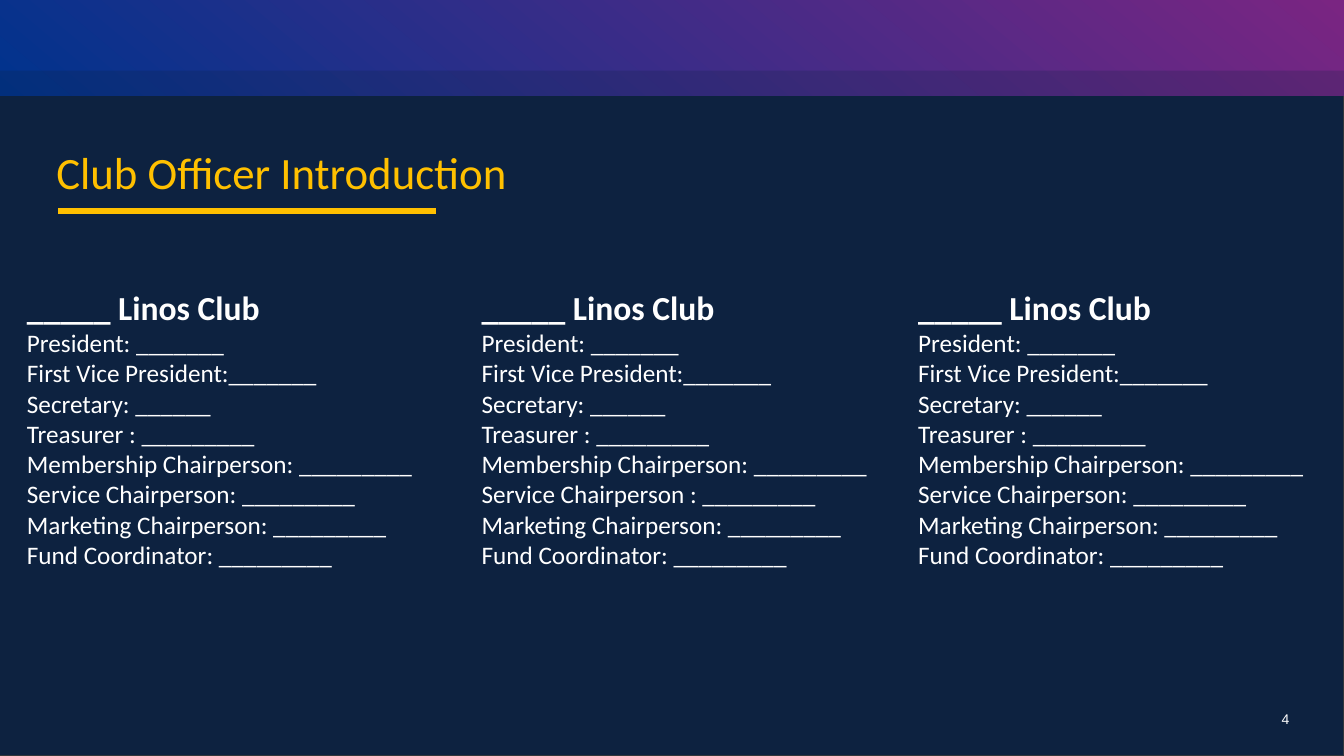
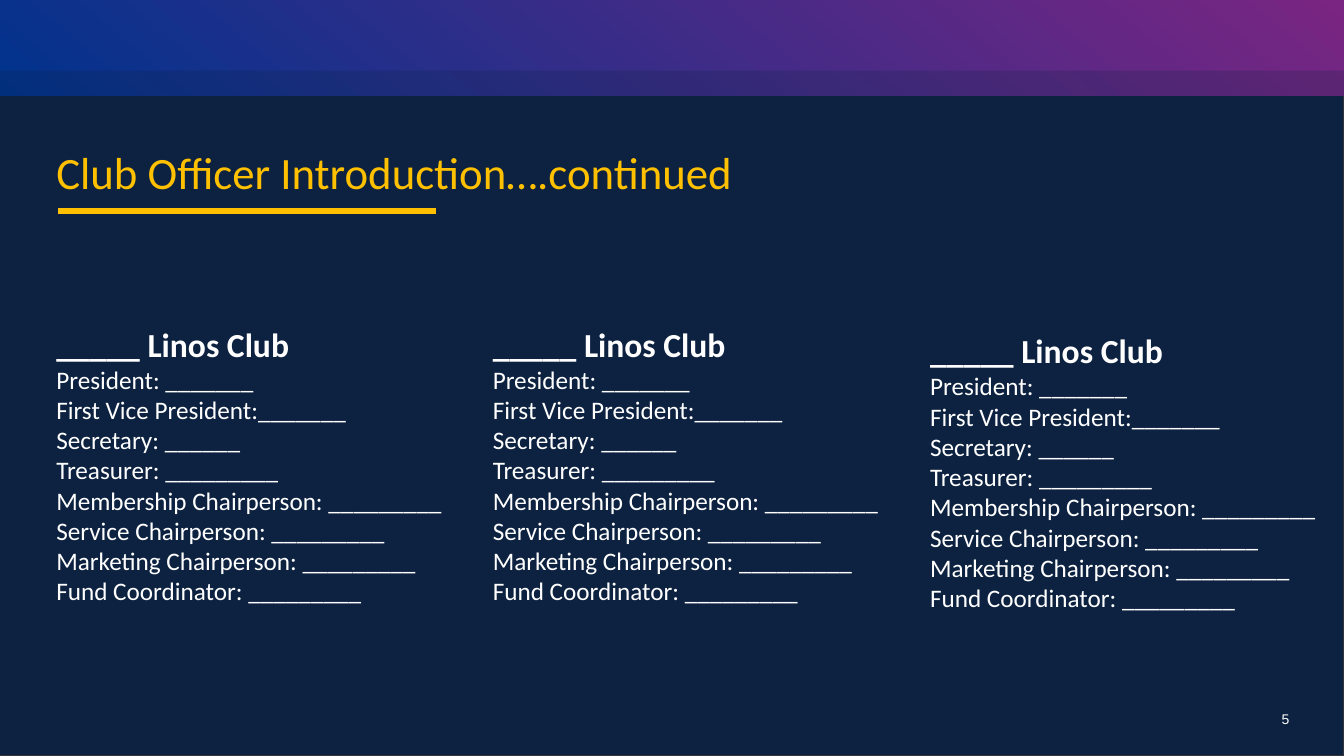
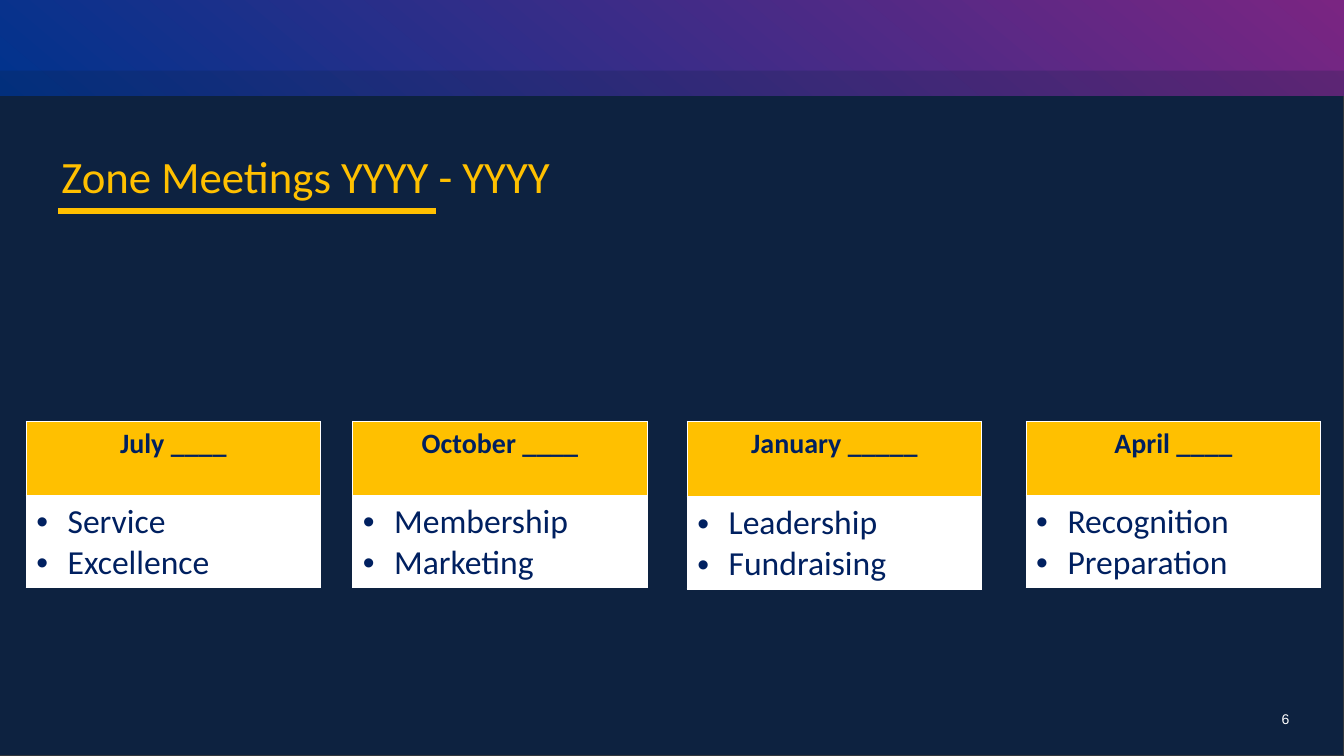
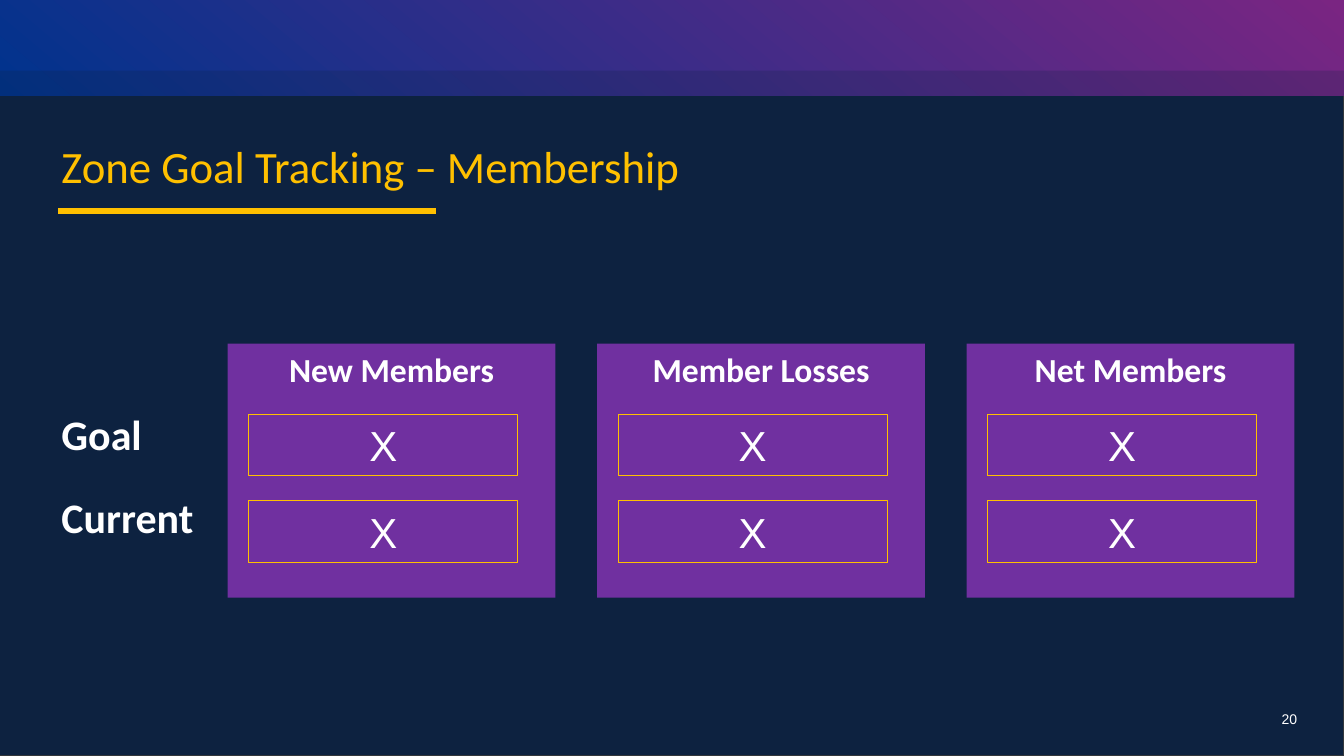
from dataclasses import dataclass

from pptx import Presentation
from pptx.dml.color import RGBColor
from pptx.enum.shapes import MSO_CONNECTOR, MSO_SHAPE
from pptx.enum.text import MSO_ANCHOR, PP_ALIGN
from pptx.oxml.ns import qn
from pptx.oxml.xmlchemy import OxmlElement
from pptx.util import Cm, Pt

RECTANGLE = MSO_SHAPE.RECTANGLE
STRAIGHT = MSO_CONNECTOR.STRAIGHT
TOP, MIDDLE = MSO_ANCHOR.TOP, MSO_ANCHOR.MIDDLE
LEFT, CENTER = PP_ALIGN.LEFT, PP_ALIGN.CENTER

SLIDE_WIDTH, SLIDE_HEIGHT = 33.87, 19.05
NAVY, EDGE, BLUE, MAGENTA = "0D2240", "33373B", "00338D", "7A2582"
GOLD, WHITE, INK, PURPLE = "FFC000", "FFFFFF", "002060", "7030A0"


@dataclass(frozen=True)
class Style:
    """The look of a paragraph."""
    size: float
    color: str
    bold: bool = False
    font: str = "Calibri"
    align: PP_ALIGN = LEFT


TITLE = Style(32, GOLD)
PAGE_NUMBER = Style(10, WHITE, font="Arial")
CLUB_NAME = Style(24, WHITE, bold=True)
OFFICER = Style(18, WHITE)
MONTH = Style(20, INK, bold=True, align=CENTER)
TOPIC = Style(24, INK)
ROW_LABEL = Style(30, WHITE, bold=True)
CARD_TITLE = Style(24, WHITE, bold=True, align=CENTER)
CARD_VALUE = Style(30, WHITE, font="Arial", align=CENTER)


@dataclass(frozen=True)
class Box:
    """A rectangle in centimetres."""
    left: float
    top: float
    width: float
    height: float

    def lengths(self) -> tuple:
        """Return the four lengths for python-pptx."""
        return Cm(self.left), Cm(self.top), Cm(self.width), Cm(self.height)


@dataclass(frozen=True)
class Heading:
    """A slide title, its place and the page number."""
    text: str
    left: float
    top: float
    page: int


@dataclass(frozen=True)
class Roster:
    """A column of officers of one club."""
    left: float
    top: float
    treasurer: str = "Treasurer:"
    service: str = "Service Chairperson:"

    def lines(self) -> list:
        """Return the officer lines with their blanks."""
        return [
            "President: _______",
            "First Vice President:_______",
            "Secretary: ______",
            f"{self.treasurer} _________",
            "Membership Chairperson: _________",
            f"{self.service} _________",
            "Marketing Chairperson: _________",
            "Fund Coordinator: _________",
        ]


@dataclass(frozen=True)
class Meeting:
    """A zone meeting with its topics."""
    left: float
    month: str
    topics: tuple
    header_height: float = 1.9


@dataclass(frozen=True)
class GoalRow:
    """A row of tracked values."""
    label: str
    label_top: float
    value_top: float


OFFICERS = [
    Roster(0.43, 7.11, "Treasurer :"),
    Roster(11.89, 7.11, "Treasurer :", "Service Chairperson :"),
    Roster(22.89, 7.11, "Treasurer :"),
]
MORE_OFFICERS = [Roster(1.17, 8.03), Roster(12.17, 8.03), Roster(23.19, 8.2)]
MEETINGS = [
    Meeting(0.66, "July ____", ("Service", "Excellence")),
    Meeting(8.89, "October ____", ("Membership", "Marketing")),
    Meeting(17.32, "January _____", ("Leadership", "Fundraising"), 1.93),
    Meeting(25.86, "April ____", ("Recognition", "Preparation")),
]
GOAL_ROWS = [GoalRow("Goal", 10.16, 10.44), GoalRow("Current", 12.27, 12.62)]
GOAL_CARDS = ["New Members", "Member Losses", "Net Members"]


def rgb(color: str) -> RGBColor:
    """Turn a hex string into a colour."""
    return RGBColor.from_string(color)


def set_attributes(target, values: dict) -> None:
    """Set every attribute in the dict on the target."""
    for name, value in values.items():
        setattr(target, name, value)


def write(frame, lines: list) -> None:
    """Write pairs of text and style as paragraphs."""
    for index, (text, style) in enumerate(lines):
        paragraph = frame.add_paragraph() if index else frame.paragraphs[0]
        paragraph.alignment = style.align
        run = paragraph.add_run()
        run.text = text
        set_attributes(run.font, {"name": style.font, "size": Pt(style.size), "bold": style.bold})
        run.font.color.rgb = rgb(style.color)


def add_text(slide, box: Box, lines: list) -> None:
    """Add a wrapping text box."""
    frame = slide.shapes.add_textbox(*box.lengths()).text_frame
    frame.word_wrap = True
    write(frame, lines)


def add_rectangle(slide, box: Box, fill: str = "", line: str = ""):
    """Add a flat rectangle with optional fill and outline."""
    shape = slide.shapes.add_shape(RECTANGLE, *box.lengths())
    shape.shadow.inherit = False
    if fill:
        shape.fill.solid()
        shape.fill.fore_color.rgb = rgb(fill)
    else:
        shape.fill.background()
    if line:
        shape.line.color.rgb = rgb(line)
        shape.line.width = Pt(0.75)
    else:
        shape.line.fill.background()
    return shape


def add_element(parent, tag: str, **attributes):
    """Append an XML element with attributes."""
    element = OxmlElement(tag)
    for name, value in attributes.items():
        element.set(name, str(value))
    parent.append(element)
    return element


def add_banner(slide) -> None:
    """Draw the gradient band and its translucent strip."""
    band = add_rectangle(slide, Box(0, 0, SLIDE_WIDTH, 2.41))
    band.fill.gradient()
    band.fill.gradient_angle = 50
    for stop, color, position in zip(band.fill.gradient_stops, (BLUE, MAGENTA), (0, 1)):
        stop.color.rgb = rgb(color)
        stop.position = position
    strip = add_rectangle(slide, Box(0, 1.78, SLIDE_WIDTH, 0.64), NAVY)
    color_element = strip._element.spPr.find(qn("a:solidFill")).find(qn("a:srgbClr"))
    add_element(color_element, "a:alpha", val=21000)


def add_title_rule(slide) -> None:
    """Draw the gold line below the title."""
    rule = slide.shapes.add_connector(STRAIGHT, Cm(1.47), Cm(5.31), Cm(11), Cm(5.31))
    rule.line.color.rgb = rgb(GOLD)
    rule.line.width = Pt(4.5)
    add_element(rule._element.spPr, "a:effectLst")


def add_slide(presentation, heading: Heading):
    """Add a slide with everything the slides share."""
    slide = presentation.slides.add_slide(presentation.slide_layouts[6])
    add_rectangle(slide, Box(0, 0, SLIDE_WIDTH, SLIDE_HEIGHT), NAVY, EDGE)
    add_banner(slide)
    add_text(slide, Box(32.05, 17.78, 1.82, 1.27), [(str(heading.page), PAGE_NUMBER)])
    add_title_rule(slide)
    add_text(slide, Box(heading.left, heading.top, 21.59, 1.63), [(heading.text, TITLE)])
    return slide


def add_roster(slide, roster: Roster) -> None:
    """Add the officers of one club."""
    lines = [("_____ Linos Club", CLUB_NAME)]
    lines += [(line, OFFICER) for line in roster.lines()]
    add_text(slide, Box(roster.left, roster.top, 10.59, 7.44), lines)


def style_cell(cell, fill: str, bottom: float) -> None:
    """Give a cell white borders and a fill."""
    properties = cell._tc.get_or_add_tcPr()
    for tag, width in (("a:lnL", 1), ("a:lnR", 1), ("a:lnT", 1), ("a:lnB", bottom)):
        border = add_element(properties, tag, w=Pt(width))
        add_element(add_element(border, "a:solidFill"), "a:srgbClr", val=WHITE)
    cell.fill.solid()
    cell.fill.fore_color.rgb = rgb(fill)


def add_bullet(paragraph) -> None:
    """Give a paragraph a hanging bullet."""
    properties = paragraph._p.get_or_add_pPr()
    properties.set("marL", str(Cm(0.79)))
    properties.set("indent", str(-Cm(0.79)))
    add_element(properties, "a:buFont", typeface="Arial")
    add_element(properties, "a:buChar", char="•")


def add_meeting(slide, meeting: Meeting) -> None:
    """Add the table of one zone meeting."""
    heights = (meeting.header_height, 2.29)
    box = Box(meeting.left, 10.62, 7.42, sum(heights))
    table = slide.shapes.add_table(2, 1, *box.lengths()).table
    set_attributes(table, {"first_row": False, "horz_banding": False})
    for row, height in zip(table.rows, heights):
        row.height = Cm(height)
    header, body = table.cell(0, 0), table.cell(1, 0)
    style_cell(header, GOLD, 3)
    style_cell(body, WHITE, 1)
    write(header.text_frame, [(meeting.month, MONTH)])
    write(body.text_frame, [(topic, TOPIC) for topic in meeting.topics])
    for paragraph in body.text_frame.paragraphs:
        add_bullet(paragraph)


def add_goal_card(slide, left: float, title: str) -> None:
    """Add a card with one value box per goal row."""
    card = add_rectangle(slide, Box(left, 8.66, 8.26, 6.4), PURPLE)
    card.text_frame.vertical_anchor = TOP
    write(card.text_frame, [(title, CARD_TITLE)])
    for row in GOAL_ROWS:
        value = add_rectangle(slide, Box(left + 0.53, row.value_top, 6.78, 1.55), line=GOLD)
        value.text_frame.vertical_anchor = MIDDLE
        write(value.text_frame, [("X", CARD_VALUE)])


def build_officers(presentation, heading: Heading, rosters: list) -> None:
    """Build a slide of club officers."""
    slide = add_slide(presentation, heading)
    for roster in rosters:
        add_roster(slide, roster)


def build_meetings(presentation) -> None:
    """Build the slide of zone meetings."""
    slide = add_slide(presentation, Heading("Zone Meetings YYYY - YYYY", 1.3, 3.63, 6))
    for meeting in MEETINGS:
        add_meeting(slide, meeting)


def build_goals(presentation) -> None:
    """Build the slide of membership goals."""
    slide = add_slide(presentation, Heading("Zone Goal Tracking – Membership", 1.3, 3.38, 20))
    for row in GOAL_ROWS:
        add_text(slide, Box(1.3, row.label_top, 4.45, 1.55), [(row.label, ROW_LABEL)])
    for index, title in enumerate(GOAL_CARDS):
        add_goal_card(slide, 5.74 + 9.31 * index, title)


def main() -> None:
    """Build and save the presentation."""
    presentation = Presentation()
    size = {"slide_width": Cm(SLIDE_WIDTH), "slide_height": Cm(SLIDE_HEIGHT)}
    set_attributes(presentation, size)
    build_officers(presentation, Heading("Club Officer Introduction", 1.17, 3.53, 4), OFFICERS)
    continued = Heading("Club Officer Introduction….continued", 1.17, 3.53, 5)
    build_officers(presentation, continued, MORE_OFFICERS)
    build_meetings(presentation)
    build_goals(presentation)
    presentation.save("out.pptx")


if __name__ == "__main__":
    main()
